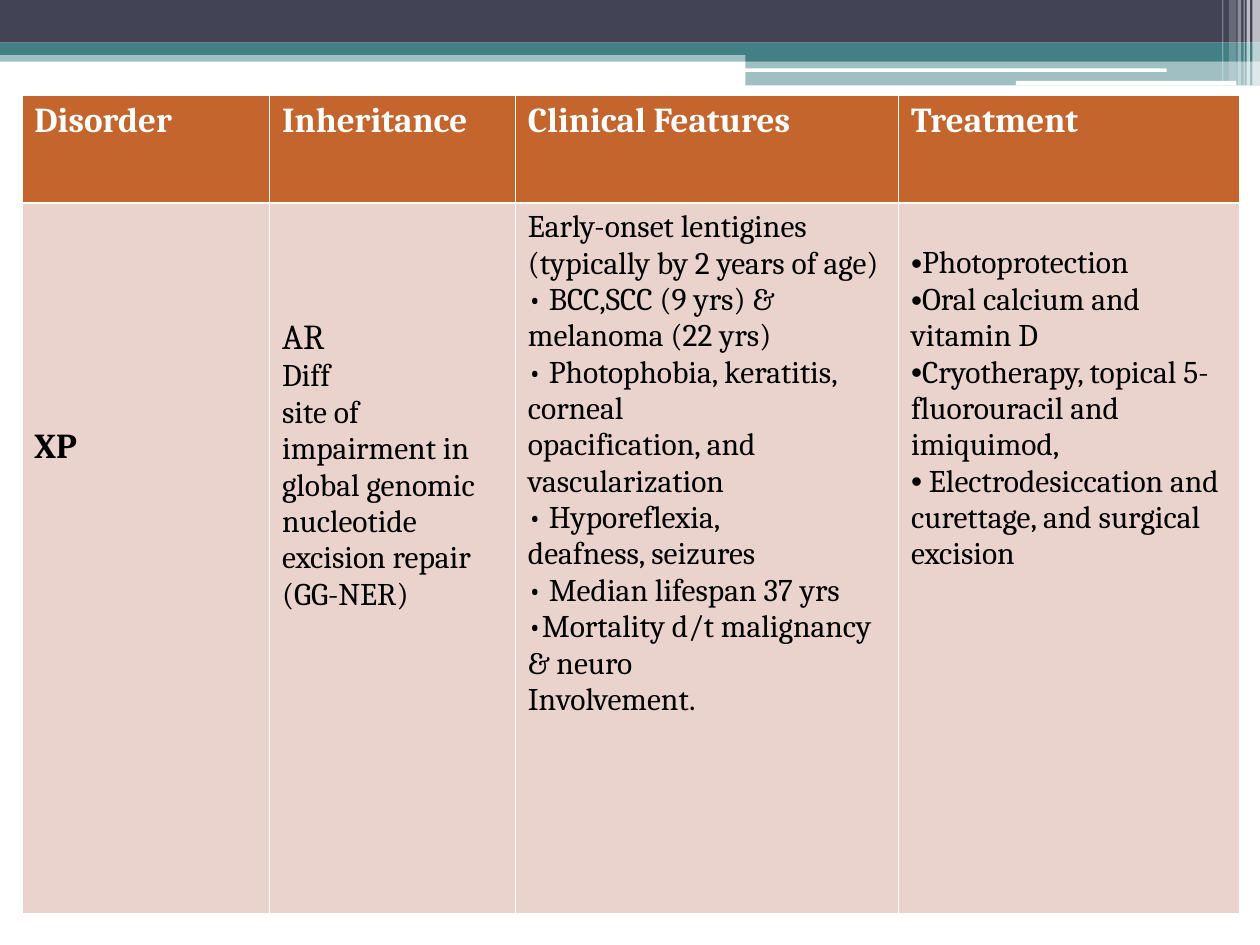
"""Build a slide with a table on the disorder XP under a banded header."""
from dataclasses import dataclass

from lxml.etree import SubElement
from pptx import Presentation
from pptx.dml.color import RGBColor
from pptx.enum.shapes import MSO_SHAPE
from pptx.oxml.ns import qn
from pptx.util import Pt


@dataclass(frozen=True)
class Theme:
    font: str = "Cambria"
    white: str = "FFFFFF"
    black: str = "000000"
    navy: str = "424456"
    teal: str = "438086"
    orange: str = "C4652D"
    blush: str = "EAD3CD"
    large: int = 20
    normal: int = 18
    border: int = 1


THEME = Theme()
BANDS = [
    (0, 28.8, 720, 6.5, THEME.teal, 50),
    (0, 0, 720, 24.4, THEME.navy, 100),
    (0, 24.4, 720, 7, THEME.teal, 100),
    (426, 28.1, 294, 7, THEME.teal, 100),
    (426, 34.6, 294, 14.2, THEME.teal, 50),
]
RULES = [(425.5, 39.1, 241.2, 2), (580.5, 46.2, 126, 2.6)]
STRIPES = [
    (715.7, 4.3, 48.8, 65),
    (712.3, 2, 48.8, 65),
    (710.6, 0.7, 48.8, 60),
    (707.2, 2, 48.8, 40),
    (702.2, 4.3, 46.2, 20),
    (698.4, 0.7, 46.2, 30),
]
TABLE_LEFT, TABLE_TOP = 12.5, 54.25
ROW_HEIGHTS = [61.75, 406]
CELL_MARGIN = 3.6
LINE_HEIGHT = 20.75
COLUMNS = [
    {"heading": "Disorder", "width": 141.5, "skip": 6, "large": 1, "bold": True,
     "lines": ["XP"]},
    {"heading": "Inheritance", "width": 140.5, "skip": 3, "large": 1,
     "lines": [
         "AR",
         "Diff",
         "site of impairment in global genomic nucleotide excision repair (GG-NER)",
     ]},
    {"heading": "Clinical Features", "width": 219,
     "lines": [
         "Early-onset lentigines",
         "(typically by 2 years of age)",
         "• BCC,SCC (9 yrs) & melanoma (22 yrs)",
         "• Photophobia, keratitis, corneal",
         "opacification, and vascularization",
         "• Hyporeflexia,",
         "deafness, seizures",
         "• Median lifespan 37 yrs",
         "•Mortality d/t malignancy & neuro",
         "Involvement.",
     ]},
    {"heading": "Treatment", "width": 195, "skip": 1, "bullet": "•",
     "lines": [
         "Photoprotection",
         "Oral calcium and vitamin D",
         "Cryotherapy, topical 5-fluorouracil and imiquimod,",
         " Electrodesiccation and curettage, and surgical excision",
     ]},
]


def add_band(page, left, top, width, height, color, opacity=100, kind=MSO_SHAPE.RECTANGLE):
    """Add a borderless filled shape with an opacity in percent."""
    band = page.shapes.add_shape(kind, Pt(left), Pt(top), Pt(width), Pt(height))
    band.shadow.inherit = False
    band.line.fill.background()
    band.fill.solid()
    band.fill.fore_color.rgb = RGBColor.from_string(color)
    if opacity < 100:
        tint = band.fill._xPr.find(qn("a:solidFill"))[0]
        SubElement(tint, qn("a:alpha"), val=str(opacity * 1000))


def write(para, text, size=THEME.normal, color=THEME.black, bold=False, bullet=None):
    """Write one formatted paragraph."""
    span = para.add_run()
    span.text = text
    span.font.name = THEME.font
    span.font.size = Pt(size)
    span.font.bold = bold
    span.font.color.rgb = RGBColor.from_string(color)
    if bullet:
        properties = para._p.get_or_add_pPr()
        properties.set("marL", "0")
        properties.set("indent", "0")
        SubElement(properties, qn("a:buFont"), typeface="Arial")
        SubElement(properties, qn("a:buChar"), char=bullet)


def style_cell(cell, color):
    """Give a cell its white borders and its fill."""
    properties = cell._tc.get_or_add_tcPr()
    for side in ("lnL", "lnR", "lnT", "lnB"):
        line = SubElement(properties, qn(f"a:{side}"), w=str(Pt(THEME.border)))
        paint = SubElement(line, qn("a:solidFill"))
        SubElement(paint, qn("a:srgbClr"), val=THEME.white)
    cell.fill.solid()
    cell.fill.fore_color.rgb = RGBColor.from_string(color)


def add_disorder_table(page):
    """Add the table, one column of content at a time."""
    total = sum(column["width"] for column in COLUMNS)
    table = page.shapes.add_table(
        len(ROW_HEIGHTS), len(COLUMNS), Pt(TABLE_LEFT), Pt(TABLE_TOP),
        Pt(total), Pt(sum(ROW_HEIGHTS)),
    ).table
    for row, height in zip(table.rows, ROW_HEIGHTS):
        row.height = Pt(height)
    for index, column in enumerate(COLUMNS):
        table.columns[index].width = Pt(column["width"])
        header, body = table.cell(0, index), table.cell(1, index)
        style_cell(header, THEME.orange)
        style_cell(body, THEME.blush)
        write(header.text_frame.paragraphs[0], column["heading"],
              size=THEME.large, color=THEME.white, bold=True)
        body.margin_top = Pt(CELL_MARGIN + column.get("skip", 0) * LINE_HEIGHT)
        frame = body.text_frame
        for number, text in enumerate(column["lines"]):
            para = frame.add_paragraph() if number else frame.paragraphs[0]
            size = THEME.large if number < column.get("large", 0) else THEME.normal
            write(para, text, size=size, bold=column.get("bold", False),
                  bullet=column.get("bullet"))


def main():
    """Build and save the deck."""
    deck = Presentation()
    deck.slide_width, deck.slide_height = Pt(720), Pt(540)
    page = deck.slides.add_slide(deck.slide_layouts[6])
    for band in BANDS:
        add_band(page, *band)
    for rule in RULES:
        add_band(page, *rule, THEME.white, kind=MSO_SHAPE.ROUNDED_RECTANGLE)
    for left, width, height, opacity in STRIPES:
        add_band(page, left, 0, width, height, THEME.white, opacity)
    add_disorder_table(page)
    deck.save("out.pptx")


if __name__ == "__main__":
    main()
